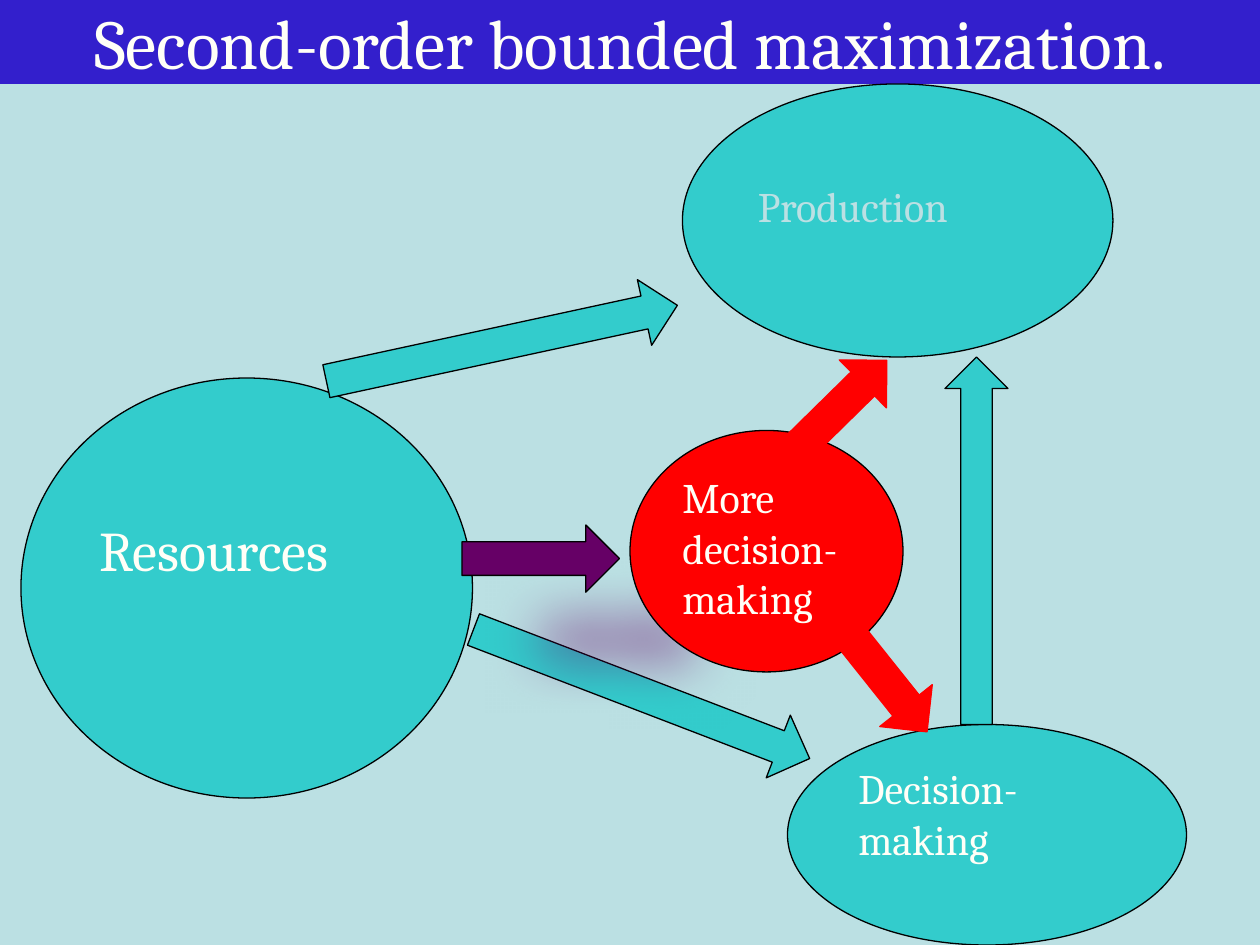
from dataclasses import dataclass

from lxml.etree import SubElement
from pptx import Presentation
from pptx.dml.color import RGBColor
from pptx.enum.shapes import MSO_SHAPE
from pptx.enum.text import MSO_ANCHOR, MSO_AUTO_SIZE, PP_ALIGN
from pptx.oxml.ns import qn
from pptx.util import Inches, Pt

COLUMNS, ROWS = 120, 90  # grid of the whole slide
CELL = Inches(10) / COLUMNS


@dataclass(frozen=True)
class Theme:
    font: str = "Cambria"
    background: str = "BBE0E3"
    banner: str = "331FCC"
    teal: str = "33CCCC"
    purple: str = "660066"
    red: str = "FF0000"
    outline: str = "000000"
    light: str = "FFFFF7"
    title_size: int = 40
    large_size: int = 32
    label_size: int = 24
    line_width: float = 0.75


THEME = Theme()


def grid(cells):
    return round(cells * CELL)


def paint(fill, color):
    fill.solid()
    fill.fore_color.rgb = RGBColor.from_string(color)


def style_text(para, size, color, align):
    para.alignment = align
    para.font.name = THEME.font
    para.font.size = Pt(size)
    para.font.color.rgb = RGBColor.from_string(color)


def add_title(page, text):
    title = page.shapes.title
    title.left, title.top = 0, 0
    title.width, title.height = grid(COLUMNS), grid(8)
    paint(title.fill, THEME.banner)
    frame = title.text_frame
    frame.text = text
    frame.auto_size = MSO_AUTO_SIZE.NONE
    frame.vertical_anchor = MSO_ANCHOR.MIDDLE
    style_text(frame.paragraphs[0], THEME.title_size, THEME.light, PP_ALIGN.CENTER)


def add_figure(page, kind, left, top, width, height, fill, line=THEME.outline):
    figure = page.shapes.add_shape(kind, *map(grid, (left, top, width, height)))
    figure.shadow.inherit = False
    paint(figure.fill, fill)
    figure.line.color.rgb = RGBColor.from_string(line)
    figure.line.width = Pt(THEME.line_width)
    return figure


def add_bubble(page, text, box, fill=THEME.teal, size=THEME.label_size,
               color=THEME.light, drop=0.05):
    """Draw an ellipse whose text starts `drop` inches below its text area's top."""
    bubble = add_figure(page, MSO_SHAPE.OVAL, *box, fill)
    frame = bubble.text_frame
    frame.word_wrap = True
    frame.vertical_anchor = MSO_ANCHOR.TOP
    frame.margin_top = Inches(drop)
    frame.text = text
    for para in frame.paragraphs:
        style_text(para, size, color, PP_ALIGN.LEFT)


def add_arrow(page, center, length, angle, fill=THEME.teal, line=THEME.outline):
    """Draw a right arrow around its center, turned clockwise by angle."""
    thickness = 6.4
    left, top = center[0] - length / 2, center[1] - thickness / 2
    arrow = add_figure(page, MSO_SHAPE.RIGHT_ARROW, left, top, length, thickness, fill, line)
    arrow.rotation = angle
    return arrow


def add_soft_shadow(shape, color, opacity, blur, distance, angle):
    """Opacity is in percent, blur and distance in points, angle in degrees."""
    effects = shape._element.spPr.find(qn("a:effectLst"))
    shadow = SubElement(effects, qn("a:outerShdw"), blurRad=str(Pt(blur)),
                        dist=str(Pt(distance)), dir=str(angle * 60000),
                        algn="ctr", rotWithShape="0")
    tint = SubElement(shadow, qn("a:srgbClr"), val=color)
    SubElement(tint, qn("a:alpha"), val=str(opacity * 1000))


def main():
    deck = Presentation()
    deck.slide_width, deck.slide_height = grid(COLUMNS), grid(ROWS)
    page = deck.slides.add_slide(deck.slide_layouts[5])
    paint(page.background.fill, THEME.background)
    add_title(page, "Second-order bounded maximization.")

    add_bubble(page, "Resources", (2, 36, 43, 40), size=THEME.large_size, drop=0.6)
    add_arrow(page, (47.8, 32.7), 34.2, 347.8)
    add_bubble(page, "Production", (65, 8, 41, 26), color=THEME.background, drop=0.45)
    add_arrow(page, (61.1, 66.1), 34.3, 21)
    add_bubble(page, "Decision-making", (75, 69, 38, 21))
    add_figure(page, MSO_SHAPE.UP_ARROW, 90, 34, 6, 35, THEME.teal)

    extra = add_arrow(page, (51.5, 53.2), 15, 0, THEME.purple)
    add_soft_shadow(extra, THEME.purple, opacity=56, blur=32.2, distance=65, angle=45)
    add_bubble(page, "More\ndecision-making", (60, 41, 26, 23), fill=THEME.red)
    add_arrow(page, (79.9, 38.8), 12.8, 315.5, THEME.red, THEME.red)
    add_arrow(page, (84.3, 64.7), 12.8, 51.4, THEME.red, THEME.red)

    deck.save("out.pptx")


if __name__ == "__main__":
    main()
